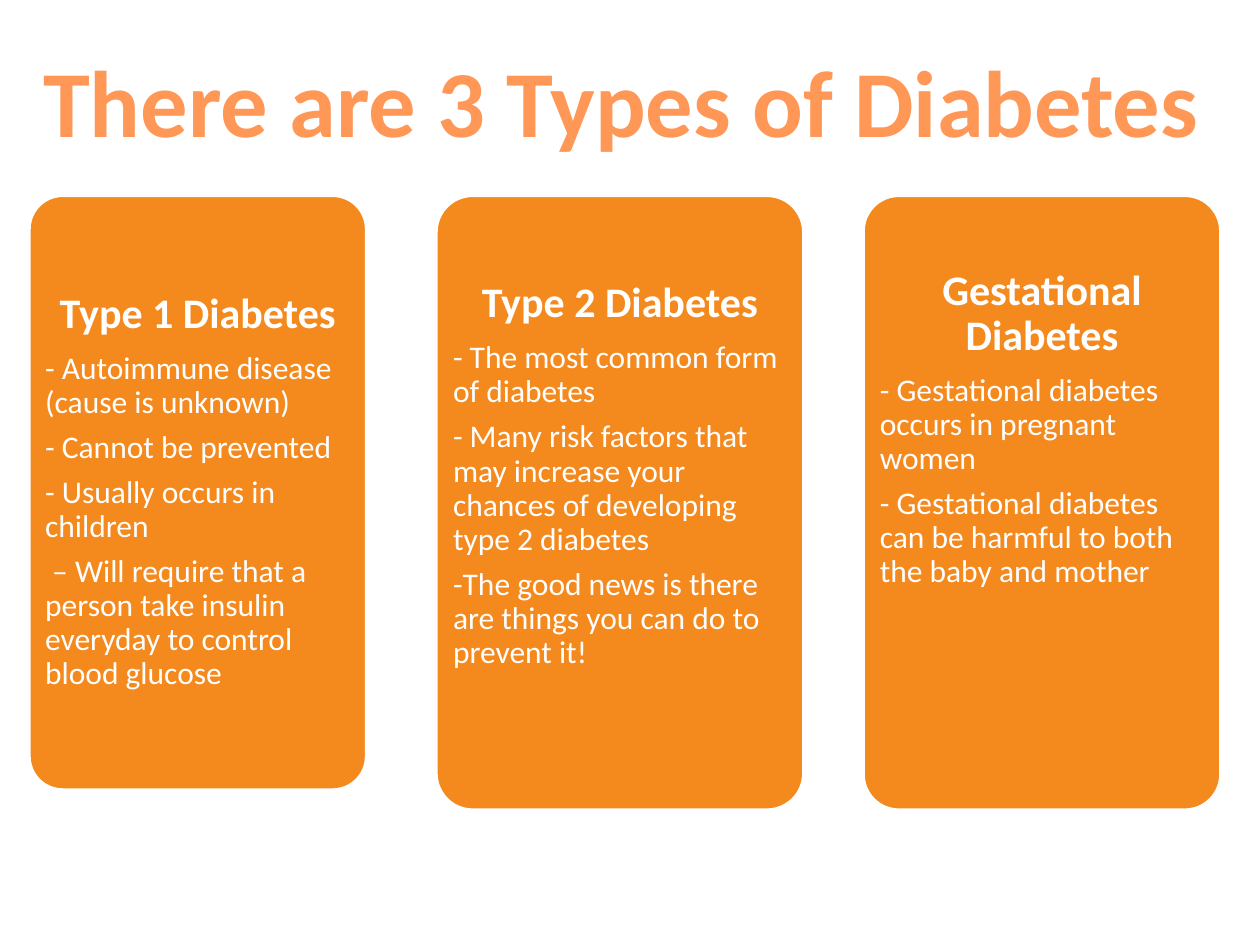
from pptx import Presentation
from pptx import util as u
from pptx.dml.color import RGBColor
from pptx.enum import shapes, text

WHITE = RGBColor(0xFF, 0xFF, 0xFF)
ORANGE = RGBColor(0xF4, 0x89, 0x1E)
PEACH = RGBColor(0xFF, 0x98, 0x56)

CARD_TOP = 1.55
# left, width, height, top inset, heading, points
CARDS = [
    (0.23, 2.68, 4.72, 0.69, "Type 1 Diabetes", [
        "- Autoimmune disease (cause is unknown)",
        "- Cannot be prevented",
        "- Usually occurs in children",
        " – Will require that a person take insulin everyday to control blood glucose",
    ]),
    (3.46, 2.92, 4.88, 0.6, "Type 2 Diabetes", [
        "- The most common form of diabetes",
        "- Many risk factors that may increase your chances of developing type 2 diabetes",
        "-The good news is there are things you can do to prevent it!",
    ]),
    (6.85, 2.84, 4.88, 0.5, "Gestational Diabetes", [
        "- Gestational diabetes occurs in pregnant women",
        "- Gestational diabetes can be harmful to both the baby and mother",
    ]),
]


class Deck:
    """Holds the style and the current slide."""

    font = "Calibri"
    heading_size, body_size = 24, 18
    line_spacing, space_ratio = 0.9, 0.35

    def __init__(self, width, height):
        self.prs = Presentation()
        self.prs.slide_width = u.Inches(width)
        self.prs.slide_height = u.Inches(height)
        self.s = self.prs.slides.add_slide(self.prs.slide_layouts[6])

    def paragraph(self, p, words, size, color, bold=False, centered=False):
        p.text = words
        p.alignment = text.PP_ALIGN.CENTER if centered else text.PP_ALIGN.LEFT
        p.font.name = self.font
        p.font.size = u.Pt(size)
        p.font.bold = bold
        p.font.color.rgb = color

    def title(self, words, left, top, width, height):
        sp = self.s.shapes.add_textbox(*map(u.Inches, (left, top, width, height)))
        tf = sp.text_frame
        tf.word_wrap = False
        tf.auto_size = text.MSO_AUTO_SIZE.SHAPE_TO_FIT_TEXT
        self.paragraph(tf.paragraphs[0], words, 54, PEACH, bold=True, centered=True)

    def card(self, left, width, height, top_inset, heading, points):
        sp = self.s.shapes.add_shape(
            shapes.MSO_SHAPE.ROUNDED_RECTANGLE,
            *map(u.Inches, (left, CARD_TOP, width, height)))
        sp.adjustments[0] = 0.1
        sp.shadow.inherit = False
        sp.fill.solid()
        sp.fill.fore_color.rgb = ORANGE
        sp.line.color.rgb = WHITE
        sp.line.width = u.Pt(2)

        tf = sp.text_frame
        tf.word_wrap = True
        tf.vertical_anchor = text.MSO_ANCHOR.TOP
        tf.margin_left = tf.margin_right = u.Inches(0.05)
        tf.margin_top = u.Inches(top_inset)
        tf.margin_bottom = u.Inches(0.03)
        for i, words in enumerate([heading] + points):
            p = tf.paragraphs[0] if i == 0 else tf.add_paragraph()
            size = self.heading_size if i == 0 else self.body_size
            self.paragraph(p, words, size, WHITE, bold=i == 0, centered=i == 0)
            p.line_spacing = self.line_spacing
            p.space_after = u.Pt(size * self.space_ratio)


def main():
    deck = Deck(10, 7.5)

    # Title
    deck.title("There are 3 Types of Diabetes", 0.2, 0.29, 9.46, 1.01)

    # One card per type
    for card in CARDS:
        deck.card(*card)

    deck.prs.save("out.pptx")


if __name__ == "__main__":
    main()
